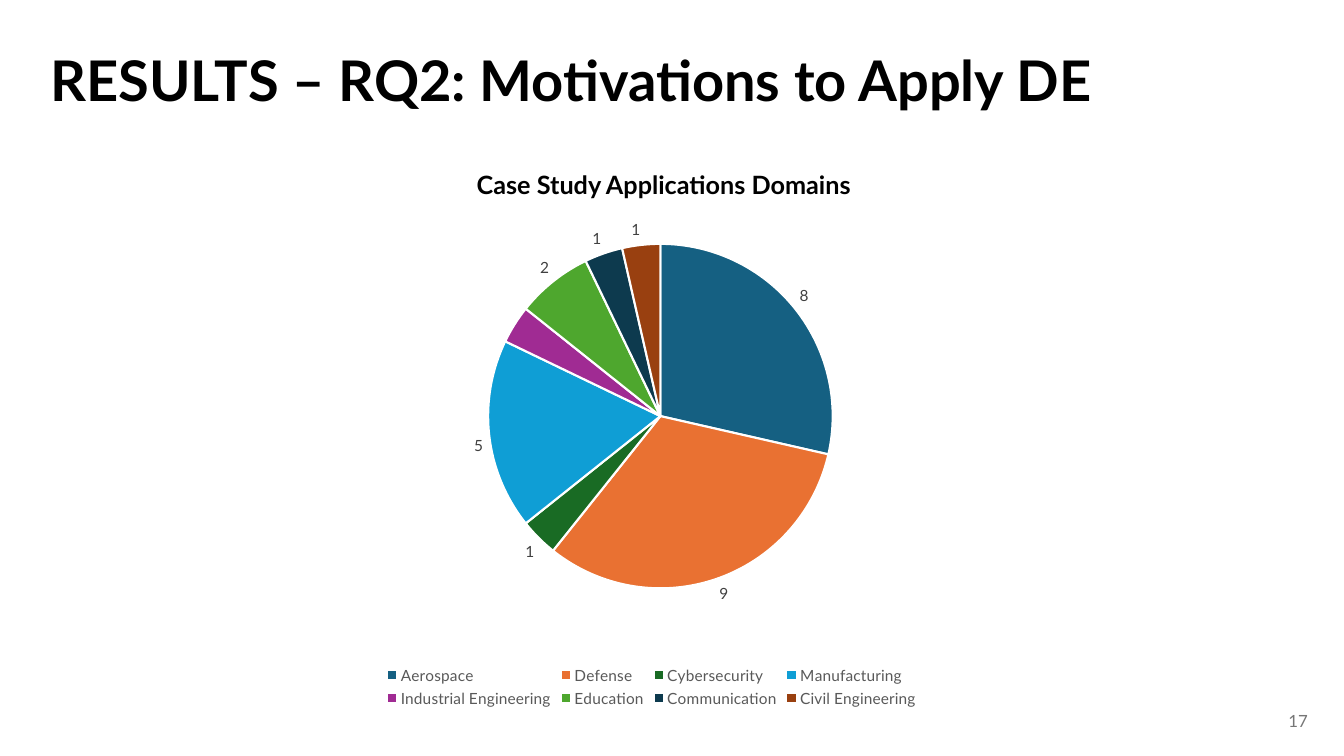
from lxml import etree
from pptx import Presentation
from pptx.chart.data import CategoryChartData
from pptx.dml.color import RGBColor
from pptx.enum import chart as charts, text
from pptx.oxml import ns
from pptx.util import Inches, Pt

FONT = "Lato"
BLACK = RGBColor(0x00, 0x00, 0x00)
WHITE = RGBColor(0xFF, 0xFF, 0xFF)
LABEL_GREY = RGBColor(0x40, 0x40, 0x40)
LEGEND_GREY = RGBColor(0x59, 0x59, 0x59)
NUMBER_GREY = RGBColor(0x76, 0x76, 0x76)

DOMAINS = [
    ("Aerospace", 8, RGBColor(0x15, 0x60, 0x82)),
    ("Defense", 9, RGBColor(0xE9, 0x71, 0x32)),
    ("Cybersecurity", 1, RGBColor(0x19, 0x6B, 0x24)),
    ("Manufacturing", 5, RGBColor(0x0F, 0x9E, 0xD5)),
    ("Industrial Engineering", 1, RGBColor(0xA0, 0x2B, 0x93)),
    ("Education", 2, RGBColor(0x4E, 0xA7, 0x2E)),
    ("Communication", 1, RGBColor(0x0D, 0x3A, 0x4E)),
    ("Civil Engineering", 1, RGBColor(0x99, 0x40, 0x10)),
]
UNLABELLED_DOMAIN = 4
PLOT_AREA = {"x": 0.273, "y": 0.059, "w": 0.478, "h": 0.761}


def style_font(font, size, color, bold=False):
    font.name = FONT
    font.size = Pt(size)
    font.bold = bold
    font.color.rgb = color


def write_line(frame, wording, size, color, bold=False):
    frame.vertical_anchor = text.MSO_ANCHOR.TOP
    frame.auto_size = text.MSO_AUTO_SIZE.NONE
    paragraph = frame.paragraphs[0]
    paragraph.alignment = text.PP_ALIGN.LEFT
    run = paragraph.add_run()
    run.text = wording
    style_font(run.font, size, color, bold)
    return paragraph


def place_title(slide, left, top, width, height):
    title = slide.shapes.title
    title.left, title.top = Inches(left), Inches(top)
    title.width, title.height = Inches(width), Inches(height)
    paragraph = write_line(title.text_frame, "RESULTS – RQ2: Motivations to Apply DE", 40, BLACK, True)
    paragraph.line_spacing = 0.9
    paragraph.space_before = Pt(0)


def add_text(slide, left, top, width, height, wording, size, color, bold=False):
    box = slide.shapes.add_textbox(Inches(left), Inches(top), Inches(width), Inches(height))
    box.text_frame.word_wrap = True
    write_line(box.text_frame, wording, size, color, bold)


def set_plot_area(chart):
    plot_area = chart._chartSpace.chart.plotArea
    for old_layout in plot_area.findall(ns.qn("c:layout")):
        plot_area.remove(old_layout)
    layout = etree.Element(ns.qn("c:layout"))
    manual = etree.SubElement(layout, ns.qn("c:manualLayout"))
    settings = {"layoutTarget": "inner", "xMode": "edge", "yMode": "edge", **PLOT_AREA}
    for name, value in settings.items():
        etree.SubElement(manual, ns.qn(f"c:{name}")).set("val", str(value))
    plot_area.insert(0, layout)


def hide_label(labels, index):
    label = etree.Element(ns.qn("c:dLbl"))
    etree.SubElement(label, ns.qn("c:idx")).set("val", str(index))
    etree.SubElement(label, ns.qn("c:delete")).set("val", "1")
    labels._element.insert(0, label)


def add_domain_pie(slide, left, top, width, height):
    data = CategoryChartData()
    data.categories = [name for name, _, _ in DOMAINS]
    data.add_series("Series 1", [count for _, count, _ in DOMAINS])
    chart = slide.shapes.add_chart(
        charts.XL_CHART_TYPE.PIE,
        Inches(left), Inches(top), Inches(width), Inches(height), data,
    ).chart
    style_font(chart.font, 11, BLACK)
    chart.has_title = False
    chart.has_legend = True
    chart.legend.position = charts.XL_LEGEND_POSITION.BOTTOM
    chart.legend.include_in_layout = False
    style_font(chart.legend.font, 11, LEGEND_GREY)
    set_plot_area(chart)

    plot = chart.plots[0]
    plot.vary_by_categories = True
    series = plot.series[0]
    for index, (_, _, color) in enumerate(DOMAINS):
        slice_format = series.points[index].format
        slice_format.fill.solid()
        slice_format.fill.fore_color.rgb = color
        slice_format.line.color.rgb = WHITE
        slice_format.line.width = Pt(1.5)

    labels = series.data_labels
    labels.show_value = True
    labels.position = charts.XL_LABEL_POSITION.OUTSIDE_END
    style_font(labels.font, 11, LABEL_GREY)
    hide_label(labels, UNLABELLED_DOMAIN)


def build_results_slide(presentation):
    slide = presentation.slides.add_slide(presentation.slide_layouts[5])
    place_title(slide, 0.4, 0.48, 10.73, 0.56)
    add_text(slide, 4.63, 1.63, 4.08, 0.4, "Case Study Applications Domains", 18, BLACK, True)
    add_domain_pie(slide, 2.89, 1.83, 7.15, 5.23)
    add_text(slide, 12.68, 7, 1.05, 0.3, "17", 12, NUMBER_GREY)


def main():
    presentation = Presentation()
    presentation.slide_width = Inches(13.33)
    presentation.slide_height = Inches(7.5)
    build_results_slide(presentation)
    presentation.save("out.pptx")


if __name__ == "__main__":
    main()
